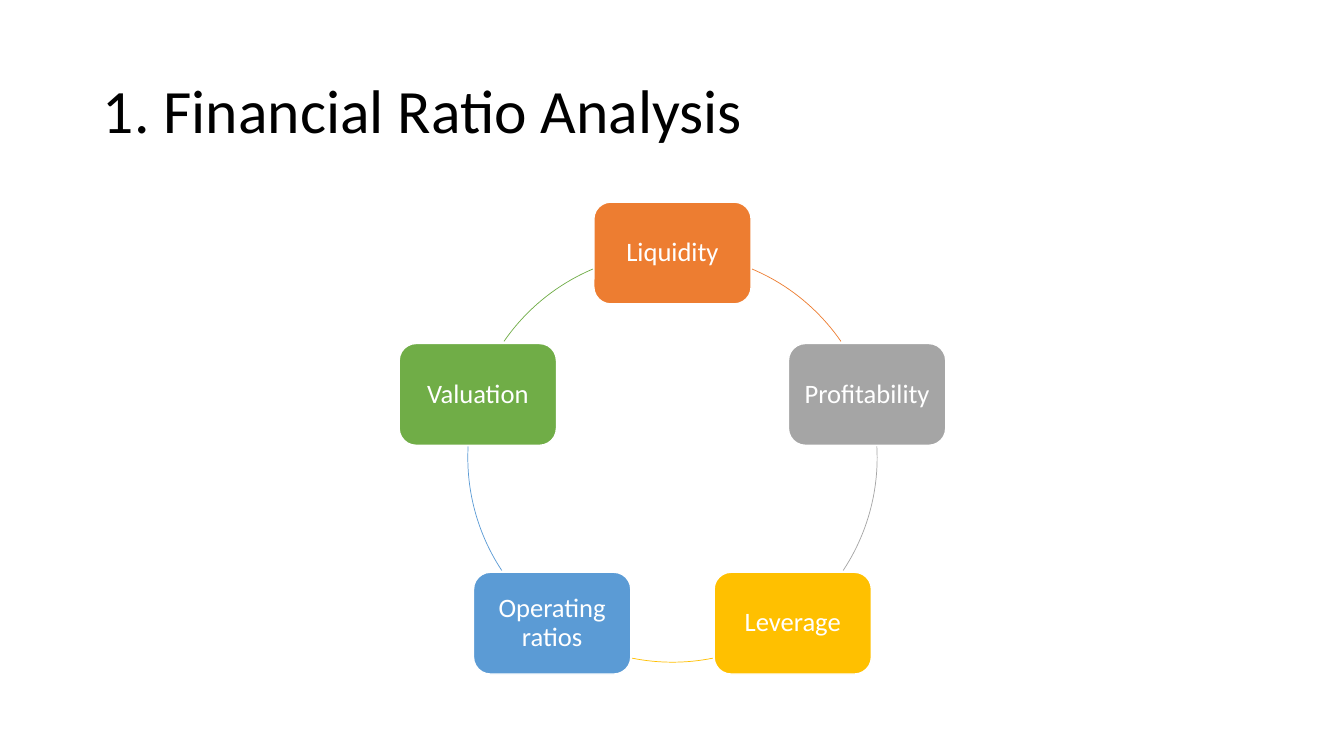
from math import cos, radians, sin

from pptx import Presentation
from pptx.dml.color import RGBColor
from pptx.enum.shapes import MSO_SHAPE
from pptx.enum.text import MSO_ANCHOR, PP_ALIGN
from pptx.util import Inches, Pt

BLACK = RGBColor(0x00, 0x00, 0x00)
WHITE = RGBColor(0xFF, 0xFF, 0xFF)
ORANGE = RGBColor(0xED, 0x7D, 0x31)
GRAY = RGBColor(0xA5, 0xA5, 0xA5)
GOLD = RGBColor(0xFF, 0xC0, 0x00)
BLUE = RGBColor(0x5B, 0x9B, 0xD5)
GREEN = RGBColor(0x70, 0xAD, 0x47)

CENTER_X, CENTER_Y, RADIUS = 6.67, 4.54, 2.03
NODE_WIDTH, NODE_HEIGHT = 1.56, 1.01

# Label, colour, and the start and end angles of the arc to the next node,
# in degrees clockwise from three o'clock.
RATIOS = [
    ("Liquidity", ORANGE, 292.9, 325.4),
    ("Profitability", GRAY, 356.9, 33.5),
    ("Leverage", GOLD, 78.6, 101.4),
    ("Operating ratios", BLUE, 146.5, 183.1),
    ("Valuation", GREEN, 214.6, 247.1),
]


def format_text(text_frame, size, color, alignment):
    text_frame.word_wrap = True
    text_frame.vertical_anchor = MSO_ANCHOR.MIDDLE
    for paragraph in text_frame.paragraphs:
        paragraph.alignment = alignment
        paragraph.line_spacing = 0.9
        for run in paragraph.runs:
            run.font.name = "Calibri"
            run.font.size = Pt(size)
            run.font.color.rgb = color


def set_title(slide, text):
    title = slide.shapes.title
    title.left, title.top = Inches(0.92), Inches(0.4)
    title.width, title.height = Inches(11.5), Inches(1.45)
    title.text_frame.text = text
    format_text(title.text_frame, 44, BLACK, PP_ALIGN.LEFT)


def add_centered_shape(slide, kind, x, y, width, height):
    shape = slide.shapes.add_shape(
        kind, Inches(x - width / 2), Inches(y - height / 2), Inches(width), Inches(height)
    )
    shape.shadow.inherit = False
    return shape


def add_node(slide, label, color, angle):
    """Place a labelled box on the ring at an angle in degrees."""
    x = CENTER_X + RADIUS * cos(radians(angle))
    y = CENTER_Y + RADIUS * sin(radians(angle))
    node = add_centered_shape(
        slide, MSO_SHAPE.ROUNDED_RECTANGLE, x, y, NODE_WIDTH, NODE_HEIGHT
    )
    node.fill.solid()
    node.fill.fore_color.rgb = color
    node.line.color.rgb = WHITE
    node.line.width = Pt(1)
    text_frame = node.text_frame
    text_frame.margin_left = text_frame.margin_right = Inches(0.08)
    text_frame.margin_top = text_frame.margin_bottom = Inches(0.08)
    text_frame.text = label
    format_text(text_frame, 19, WHITE, PP_ALIGN.CENTER)


def add_arc(slide, color, start, end):
    arc = add_centered_shape(
        slide, MSO_SHAPE.ARC, CENTER_X, CENTER_Y, 2 * RADIUS, 2 * RADIUS
    )
    # Angles are stored in 1/60000 degree, adjustments in 1/100000.
    arc.adjustments[0] = start * 0.6
    arc.adjustments[1] = end * 0.6
    arc.fill.background()
    arc.line.color.rgb = color
    arc.line.width = Pt(0.5)


def main():
    presentation = Presentation()
    presentation.slide_width = Inches(13.33)
    presentation.slide_height = Inches(7.5)
    slide = presentation.slides.add_slide(presentation.slide_layouts[5])

    set_title(slide, "1. Financial Ratio Analysis")
    step = 360 / len(RATIOS)
    for index, (label, color, start, end) in enumerate(RATIOS):
        add_node(slide, label, color, index * step - 90)
        add_arc(slide, color, start, end)

    presentation.save("out.pptx")


if __name__ == "__main__":
    main()
